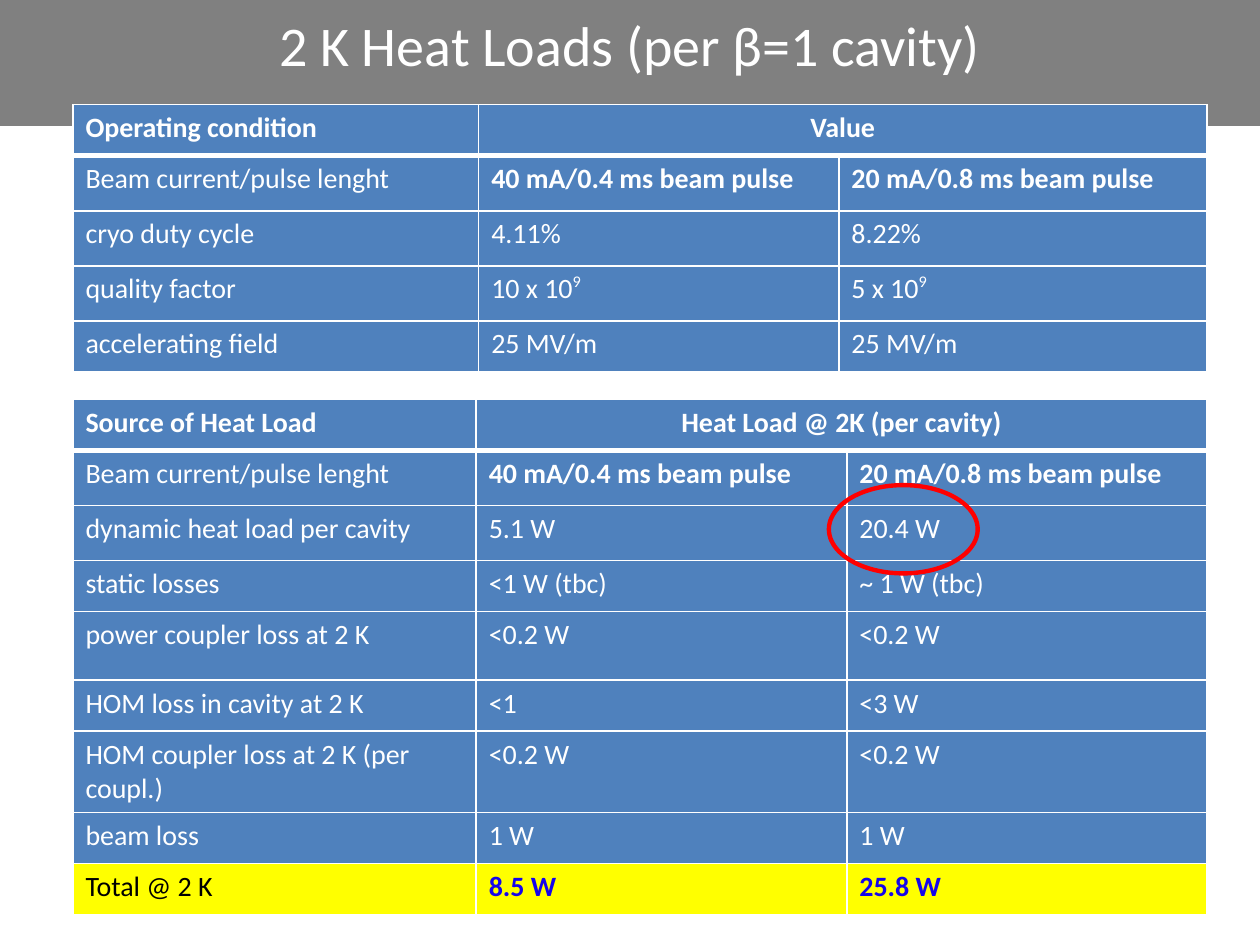
from pptx import Presentation
from pptx.dml.color import RGBColor
from pptx.enum.shapes import MSO_SHAPE
from pptx.enum.text import MSO_ANCHOR, PP_ALIGN
from pptx.oxml.ns import qn
from pptx.util import Cm, Pt
from lxml import etree

RECT, OVAL = MSO_SHAPE.RECTANGLE, MSO_SHAPE.OVAL
MID, CENTER, LEFT = MSO_ANCHOR.MIDDLE, PP_ALIGN.CENTER, PP_ALIGN.LEFT

WHITE = RGBColor(0xFF, 0xFF, 0xFF)
BLACK = RGBColor(0, 0, 0)
GREY = RGBColor(0x80, 0x80, 0x80)
BLUE = RGBColor(0x4F, 0x81, 0xBD)
YELLOW = RGBColor(0xFF, 0xFF, 0)
INK = RGBColor(0x15, 0x05, 0xEB)
RED = RGBColor(0xFF, 0, 0)

BODY = {"name": "Calibri", "size": Pt(16), "bold": False}
HEAD = {"name": "Calibri", "size": Pt(32), "bold": False}

PULSE = ["Beam current/pulse lenght", "40 mA/0.4 ms beam pulse",
         "20 mA/0.8 ms beam pulse"]
# A caret marks the start of a superscript
STATES = [
    ["Operating condition", "Value", ""],
    PULSE,
    ["cryo duty cycle", "4.11%", "8.22%"],
    ["quality factor", "10 x 10^9", "5 x 10^9"],
    ["accelerating field", "25 MV/m", "25 MV/m"],
]
LOADS = [
    ["Source of Heat Load", "Heat Load @ 2K (per cavity)", ""],
    PULSE,
    ["dynamic heat load per cavity", "5.1 W", "20.4 W"],
    ["static losses", "<1 W (tbc)", "~ 1 W (tbc)"],
    ["power coupler loss at 2 K", "<0.2 W", "<0.2 W"],
    ["HOM loss in cavity at 2 K", "<1", "<3 W"],
    ["HOM coupler loss at 2 K (per coupl.)", "<0.2 W", "<0.2 W"],
    ["beam loss", "1 W", "1 W"],
    ["Total @ 2 K", "8.5 W", "25.8 W"],
]


def style(font, form, color):
    for key, value in form.items():
        setattr(font, key, value)
    font.color.rgb = color


def paint(shape, color):
    shape.fill.solid()
    shape.fill.fore_color.rgb = color


def border(cell, widths):
    """Draw white edges; widths maps the side letter to points."""
    props = cell._tc.get_or_add_tcPr()
    for side, width in widths.items():
        line = etree.SubElement(props, qn("a:ln" + side), w=str(Pt(width)))
        fill = etree.SubElement(line, qn("a:solidFill"))
        etree.SubElement(fill, qn("a:srgbClr"), val=str(WHITE))


def write(cell, text, form, color, align):
    para = cell.text_frame.paragraphs[0]
    para.alignment = align
    for i, part in enumerate(text.split("^")):
        run = para.add_run()
        run.text = part
        style(run.font, form, color)
        if i:
            run.font._element.set("baseline", "40000")


def banner(slide, box, text):
    left, top, width, height = box
    title = slide.shapes.title
    # Grey band behind the title
    band = slide.shapes.add_shape(RECT, *map(Cm, box))
    paint(band, GREY)
    band.line.fill.background()
    band.shadow.inherit = False
    title._element.addprevious(band._element)
    # Title
    place = {"left": left + 1.27, "top": top,
             "width": width - 2.54, "height": height * 0.7}
    for key, value in place.items():
        setattr(title, key, Cm(value))
    paint(title, GREY)
    title.text_frame.text = text
    title.text_frame.vertical_anchor = MID
    para = title.text_frame.paragraphs[0]
    para.alignment = CENTER
    style(para.runs[0].font, HEAD, WHITE)


def grid(slide, box, data, cols, rows, total=False):
    """Table with a merged header; total marks the last row."""
    frame = slide.shapes.add_table(len(data), len(cols), *map(Cm, box))
    table = frame.table
    table.horz_banding = False
    for col, width in zip(table.columns, cols):
        col.width = Cm(width)
    for row, height in zip(table.rows, rows):
        row.height = Cm(height)
    table.cell(0, 1).merge(table.cell(0, 2))

    for r, line in enumerate(data):
        last = total and r == len(data) - 1
        for c, text in enumerate(line):
            cell = table.cell(r, c)
            border(cell, {"L": 1, "R": 1, "T": 3 if r == 1 else 1,
                          "B": 3 if r == 0 else 1})
            paint(cell, YELLOW if last else BLUE)
            if not text:
                continue
            bold = r == 0 or (c > 0 and (r == 1 or last))
            color = (INK if c else BLACK) if last else WHITE
            align = CENTER if r == 0 and c else LEFT
            write(cell, text, {**BODY, "bold": bold}, color, align)


def ring(slide, box):
    oval = slide.shapes.add_shape(OVAL, *map(Cm, box))
    oval.fill.background()
    oval.line.color.rgb = RED
    oval.line.width = Pt(2.5)
    oval.shadow.inherit = False


def main():
    deck = Presentation()
    deck.slide_width, deck.slide_height = Cm(25.4), Cm(19.05)
    slide = deck.slides.add_slide(deck.slide_layouts[5])
    banner(slide, (0, 0, 25.4, 2.54), "2 K Heat Loads (per β=1 cavity)")
    # Row heights: low, mid and tall
    low, mid, tall = 1.03, 1.11, 1.38
    grid(slide, (1.47, 2.11, 22.86, 5.4), STATES,
         (8.18, 7.26, 7.42), [low] + [mid] * 3 + [low])
    grid(slide, (1.47, 8.05, 22.86, 9.8), LOADS, (8.13, 7.47, 7.26),
         [low, mid, mid, low, tall] + [low] * 4, total=True)
    # Mark the high dynamic load
    ring(slide, (16.71, 9.78, 3, 1.78))
    deck.save("out.pptx")


if __name__ == "__main__":
    main()
